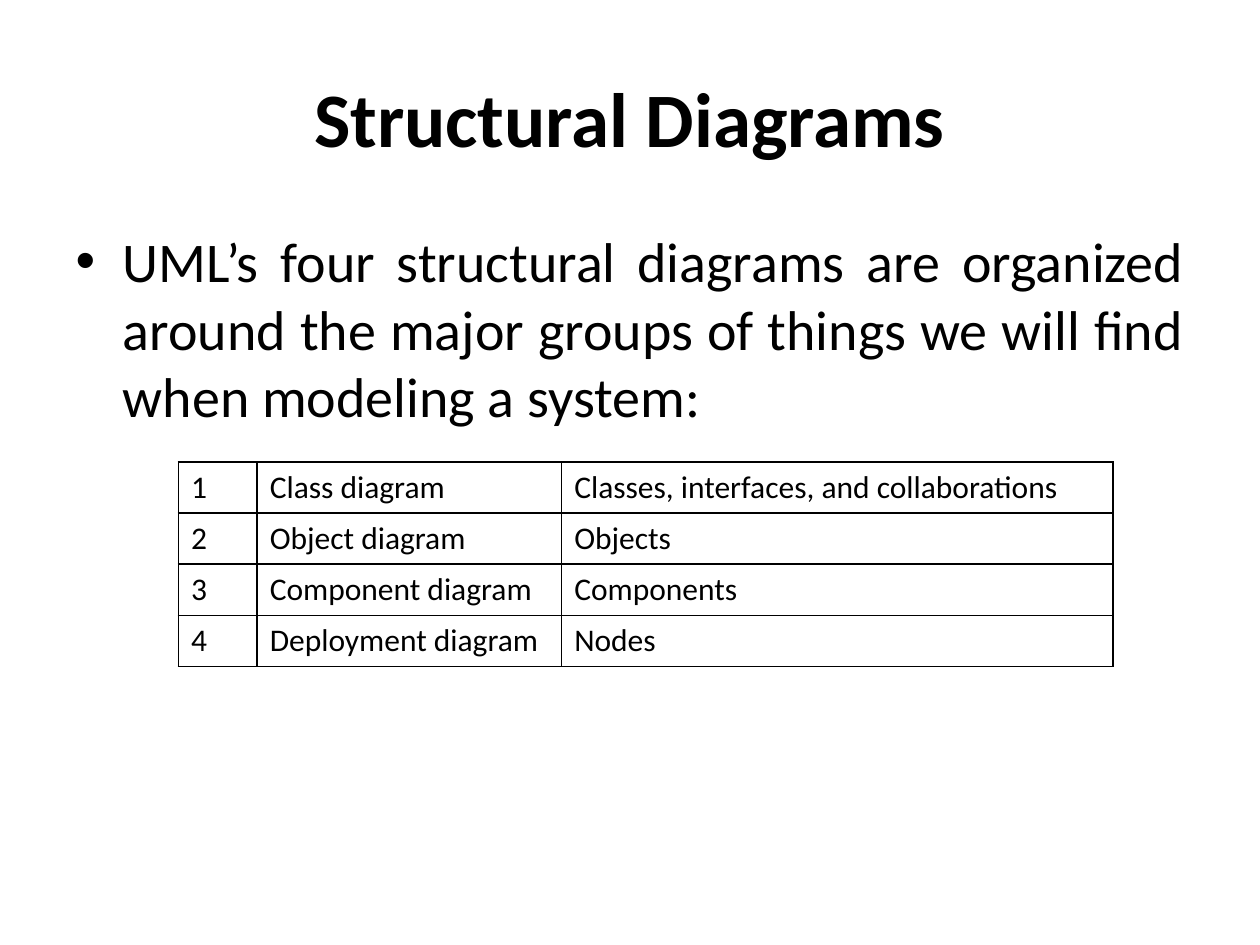
from dataclasses import dataclass

from lxml.etree import SubElement
from pptx import Presentation
from pptx.dml.color import RGBColor
from pptx.enum.text import MSO_ANCHOR, PP_ALIGN
from pptx.oxml.ns import qn
from pptx.util import Pt


@dataclass(frozen=True)
class Theme:
    font: str = "Calibri"
    ink: str = "000000"
    title_size: int = 44
    body_size: int = 32
    table_size: int = 18
    border: int = 1


THEME = Theme()


def style_text(tf, size, align, bold=False):
    for p in tf.paragraphs:
        p.alignment = align
        for r in p.runs:
            r.font.name = THEME.font
            r.font.size = Pt(size)
            r.font.bold = bold
            r.font.color.rgb = RGBColor.from_string(THEME.ink)


def add_borders(cell):
    tc_pr = cell._tc.get_or_add_tcPr()
    for i, side in enumerate(("a:lnL", "a:lnR", "a:lnT", "a:lnB")):
        ln = SubElement(tc_pr, qn(side), w=str(Pt(THEME.border)))
        fill = SubElement(ln, qn("a:solidFill"))
        SubElement(fill, qn("a:srgbClr"), val=THEME.ink)
        # Borders must come before the cell fill
        tc_pr.insert(i, ln)


prs = Presentation()
prs.slide_width, prs.slide_height = Pt(720), Pt(540)
s = prs.slides.add_slide(prs.slide_layouts[1])

# Title
title = s.shapes.title
title.left, title.top, title.width, title.height = Pt(36), Pt(21.6), Pt(648), Pt(90)
tf = title.text_frame
tf.text = "Structural Diagrams"
tf.vertical_anchor = MSO_ANCHOR.MIDDLE
style_text(tf, THEME.title_size, PP_ALIGN.CENTER, bold=True)

# Introduction, with the bullet of the body placeholder
body = s.placeholders[1]
body.left, body.top, body.width, body.height = Pt(36), Pt(126), Pt(648), Pt(356.4)
tf = body.text_frame
tf.text = (
    "UML’s four structural diagrams are organized around the major groups "
    "of things we will find when modeling a system:"
)
style_text(tf, THEME.body_size, PP_ALIGN.JUSTIFY)

# Diagram table
diagrams = [
    ("Class diagram", "Classes, interfaces, and collaborations"),
    ("Object diagram", "Objects"),
    ("Component diagram", "Components"),
    ("Deployment diagram", "Nodes"),
]
col_widths = [45, 174, 315]
row_height = 29.2

table = s.shapes.add_table(
    len(diagrams), len(col_widths), Pt(102), Pt(264),
    Pt(sum(col_widths)), Pt(row_height * len(diagrams)),
).table
table.first_row = False
table.horz_banding = False
for column, width in zip(table.columns, col_widths):
    column.width = Pt(width)

for number, (diagram, things) in enumerate(diagrams, start=1):
    row = table.rows[number - 1]
    row.height = Pt(row_height)
    for cell, text in zip(row.cells, (str(number), diagram, things)):
        cell.text_frame.text = text
        style_text(cell.text_frame, THEME.table_size, PP_ALIGN.LEFT)
        cell.fill.background()
        add_borders(cell)

prs.save("out.pptx")
